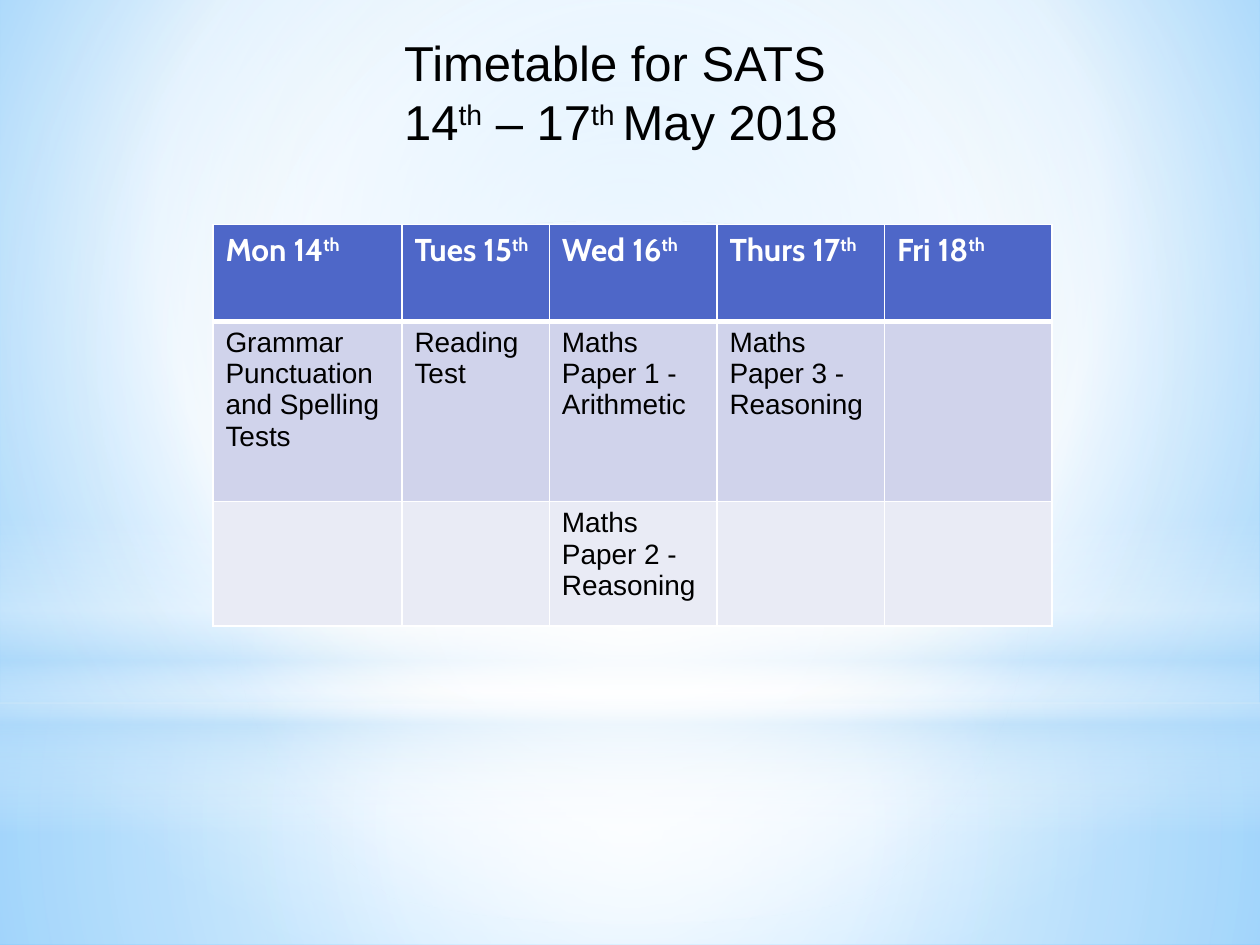
from pptx import Presentation
from pptx.dml.color import RGBColor as RGB
from pptx.enum.shapes import MSO_SHAPE as SHAPE
from pptx.enum.text import MSO_AUTO_SIZE as AUTO
from pptx.oxml import parse_xml
from pptx.oxml.ns import nsdecls, qn
from pptx.util import Inches, Pt

COLORS = {"white": "FFFFFF", "black": "000000", "pale": "B4DCFA", "sky": "9ED5FF",
          "blue": "5BB9FF", "header": "4E67C8", "band1": "D0D3EB", "band2": "E9EBF5"}
CENTER = (50, 50, 50, 50)


class Deck:
    """Style helpers bound to the current slide."""

    def __init__(self, width, height):
        self.prs = Presentation()
        self.prs.slide_width, self.prs.slide_height = Inches(width), Inches(height)
        self.slide = self.prs.slides.add_slide(self.prs.slide_layouts[6])

    def gradient(self, fill, owner, stops, focus=None):
        """Stops are (position, colour, opacity); without a focus it runs downwards."""
        fill.gradient()
        grad = owner.find(".//" + qn("a:gradFill"))
        gs = "".join(
            f'<a:gs pos="{pos * 1000}"><a:srgbClr val="{COLORS[color]}">'
            f'<a:alpha val="{alpha * 1000}"/></a:srgbClr></a:gs>'
            for pos, color, alpha in stops)
        if focus:
            l, t, r, b = (v * 1000 for v in focus)
            way = (f'<a:path path="circle"><a:fillToRect l="{l}" t="{t}" '
                   f'r="{r}" b="{b}"/></a:path>')
        else:
            way = '<a:lin ang="5400000" scaled="0"/>'
        grad.getparent().replace(grad, parse_xml(
            f'<a:gradFill {nsdecls("a")} rotWithShape="1"><a:gsLst>{gs}</a:gsLst>{way}</a:gradFill>'))

    def background(self, stops, focus):
        self.gradient(self.slide.background.fill, self.slide._element, stops, focus)

    def glow(self, kind, box, stops, focus=None):
        sp = self.slide.shapes.add_shape(kind, *map(Inches, box))
        sp.shadow.inherit = False
        sp.line.fill.background()
        self.gradient(sp.fill, sp._element.spPr, stops, focus)

    def fill_text(self, tf, text, size, font, color, bold=False):
        """Lines become paragraphs; text between carets is superscript."""
        for i, line in enumerate(text.split("\n")):
            p = tf.add_paragraph() if i else tf.paragraphs[0]
            p.font.size, p.font.name, p.font.bold = Pt(size), font, bold
            p.font.color.rgb = RGB.from_string(COLORS[color])
            for j, part in enumerate(line.split("^")):
                if part:
                    r = p.add_run()
                    r.text = part
                    if j % 2:
                        r._r.get_or_add_rPr().set("baseline", "30000")

    def text(self, box, text, **style):
        tf = self.slide.shapes.add_textbox(*map(Inches, box)).text_frame
        tf.word_wrap = False
        tf.auto_size = AUTO.SHAPE_TO_FIT_TEXT
        self.fill_text(tf, text, **style)

    def borders(self, cell, top, bottom):
        tcPr = cell._tc.get_or_add_tcPr()
        widths = {"L": 1, "R": 1, "T": top, "B": bottom}
        for i, (side, width) in enumerate(widths.items()):
            tcPr.insert(i, parse_xml(
                f'<a:ln{side} {nsdecls("a")} w="{Pt(width)}"><a:solidFill>'
                f'<a:srgbClr val="{COLORS["white"]}"/></a:solidFill></a:ln{side}>'))

    def table(self, box, cols, heights, rows, fills, styles):
        table = self.slide.shapes.add_table(len(rows), len(cols), *map(Inches, box)).table
        for col, width in zip(table.columns, cols):
            col.width = Inches(width)
        for i, (row, height) in enumerate(zip(table.rows, heights)):
            row.height = Inches(height)
            for cell, text in zip(row.cells, rows[i]):
                cell.fill.solid()
                cell.fill.fore_color.rgb = RGB.from_string(COLORS[fills[i]])
                self.borders(cell, top=3 if i == 1 else 1, bottom=3 if i == 0 else 1)
                self.fill_text(cell.text_frame, text, **styles[i])


def main():
    deck = Deck(10, 7.5)

    # Backdrop: sky, floor, horizon band and central glow
    deck.background([(0, "sky", 100), (60, "white", 100), (100, "blue", 100)], (20, 10, 20, 60))
    deck.glow(SHAPE.RECTANGLE, (0, 5.58, 10, 1.92),
              [(0, "white", 91), (37, "white", 76), (100, "pale", 79)], CENTER)
    deck.glow(SHAPE.RECTANGLE, (0, 0, 10, 5.58),
              [(0, "white", 89), (48, "white", 62), (100, "pale", 79)], CENTER)
    deck.glow(SHAPE.RECTANGLE, (0, 4.12, 10, 2.5),
              [(0, "white", 0), (29, "white", 30), (45, "pale", 40),
               (55, "white", 26), (65, "pale", 60), (100, "white", 0)])
    deck.glow(SHAPE.OVAL, (0, 1.75, 10, 5.58), [(0, "white", 100), (56, "white", 0)], CENTER)

    # Title
    deck.text((3.11, 0.21, 3.79, 1.04), "Timetable for SATS\n14^th^ – 17^th ^May 2018",
              size=28, font="Arial", color="black")

    # Timetable
    head = {"size": 18, "font": "Cabin", "color": "white", "bold": True}
    body = {"size": 16, "font": "Arial", "color": "black"}
    rows = [
        ["Mon 14^th^", "Tues 15^th^", "Wed 16^th^", "Thurs 17^th^", "Fri 18^th^"],
        ["Grammar Punctuation and Spelling\nTests", "Reading Test",
         "Maths Paper 1 - Arithmetic", "Maths Paper 3 - Reasoning", ""],
        ["", "", "Maths Paper 2 - Reasoning", "", ""],
    ]
    deck.table((1.69, 1.78, 6.67, 3.2), [1.5, 1.17, 1.33, 1.33, 1.33], [0.77, 1.43, 0.99],
               rows, ["header", "band1", "band2"], [head, body, body])

    deck.prs.save("out.pptx")


if __name__ == "__main__":
    main()
